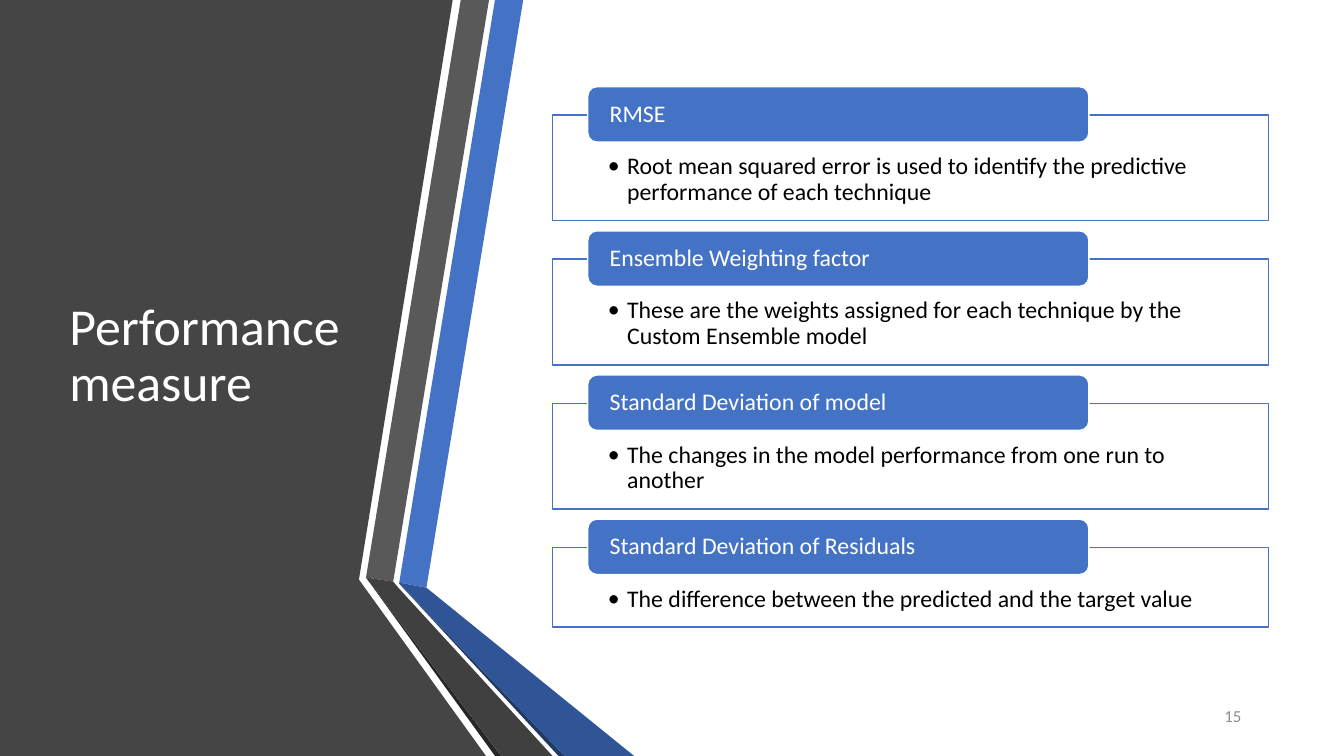
import pptx
import pptx.util
import pptx.dml.color
import pptx.enum.shapes
import pptx.enum.text
import pptx.oxml
import pptx.oxml.ns
from pptx.util import Inches

RGBColor = pptx.dml.color.RGBColor
Shapes = pptx.enum.shapes.MSO_SHAPE
Anchor = pptx.enum.text.MSO_ANCHOR
Align = pptx.enum.text.PP_ALIGN

WHITE = RGBColor(0xFF, 0xFF, 0xFF)
BLACK = RGBColor(0x00, 0x00, 0x00)
PANEL_GREY = RGBColor(0x45, 0x45, 0x45)
BAND_GREY = RGBColor(0x59, 0x59, 0x59)
FOLD_GREY = RGBColor(0x40, 0x40, 0x40)
EDGE_GREY = RGBColor(0x26, 0x26, 0x26)
NUMBER_GREY = RGBColor(0x8C, 0x8C, 0x8C)
BLUE = RGBColor(0x44, 0x72, 0xC4)
FOLD_BLUE = RGBColor(0x2F, 0x55, 0x97)
EDGE_BLUE = RGBColor(0x20, 0x38, 0x64)


def write(shape, text, size, color, anchor, insets, align=Align.LEFT):
    """Put one styled paragraph in the shape; insets are left, top, right, bottom."""
    frame = shape.text_frame
    frame.text = text
    frame.word_wrap = True
    frame.vertical_anchor = anchor
    (frame.margin_left, frame.margin_top,
     frame.margin_right, frame.margin_bottom) = [Inches(inset) for inset in insets]
    para = frame.paragraphs[0]
    para.alignment = align
    para.line_spacing = 0.9
    font = para.runs[0].font
    font.name = "Calibri"
    font.size = pptx.util.Pt(size)
    font.color.rgb = color
    return para


def add_box(kind, left, top, width, height, line_color):
    box = page.shapes.add_shape(kind, Inches(left), Inches(top), Inches(width), Inches(height))
    box.shadow.inherit = False
    box.fill.solid()
    box.line.color.rgb = line_color
    box.line.width = pptx.util.Pt(1)
    return box


deck = pptx.Presentation()
deck.slide_width = Inches(13.33)
deck.slide_height = Inches(7.5)
page = deck.slides.add_slide(deck.slide_layouts[6])

# Dark panel and the folded bands beside it, from back to front
bands = [
    (PANEL_GREY, [(0, 0), (4.49, 0), (3.56, 5.75), (4.82, 7.5), (0, 7.5)]),
    (BLUE, [(3.96, 5.78), (4.23, 5.83), (5.19, 0), (4.91, 0)]),
    (BAND_GREY, [(4.85, 0), (4.57, 0), (3.63, 5.73), (3.9, 5.77)]),
    (EDGE_GREY, [(3.63, 5.73), (4.91, 7.5), (4.97, 7.5)]),
    (EDGE_BLUE, [(3.96, 5.79), (5.54, 7.5), (5.6, 7.5)]),
    (FOLD_BLUE, [(3.96, 5.79), (5.6, 7.5), (6.29, 7.5), (4.23, 5.83), (3.96, 5.78)]),
    (FOLD_GREY, [(5.48, 7.5), (3.95, 5.83), (3.9, 5.77), (3.63, 5.73), (4.97, 7.5)]),
]
for color, corners in bands:
    points = [(Inches(x), Inches(y)) for x, y in corners]
    builder = page.shapes.build_freeform(*points[0])
    builder.add_line_segments(points[1:], close=True)
    band = builder.convert_to_shape()
    band.shadow.inherit = False
    band.fill.solid()
    band.fill.fore_color.rgb = color
    band.line.fill.background()

title = page.shapes.add_textbox(Inches(0.59), Inches(0.75), Inches(3.04), Inches(5.58))
write(title, "Performance measure", 37, WHITE, Anchor.MIDDLE, (0.1, 0.05, 0.1, 0.05))

number = page.shapes.add_textbox(Inches(11.22), Inches(6.9), Inches(1.19), Inches(0.4))
number_para = write(number, "15", 12, NUMBER_GREY, Anchor.MIDDLE,
                    (0.1, 0.05, 0.1, 0.05), Align.RIGHT)
number_para.line_spacing = 1.0

# Measures: a framed description with a heading tab over its top edge
measures = [
    ("RMSE", 1.05,
     "Root mean squared error is used to identify the predictive performance of each technique"),
    ("Ensemble Weighting factor", 1.05,
     "These are the weights assigned for each technique by the Custom Ensemble model"),
    ("Standard Deviation of model", 1.05,
     "The changes in the model performance from one run to another"),
    ("Standard Deviation of Residuals", 0.79,
     "The difference between the predicted and the target value"),
]
for index, (heading, height, description) in enumerate(measures):
    top = 1.14 + index * 1.43

    frame_box = add_box(Shapes.RECTANGLE, 5.48, top, 7.1, height, BLUE)
    frame_box.fill.fore_color.rgb = WHITE
    fill_color = frame_box.fill._xPr.find(".//" + pptx.oxml.ns.qn("a:srgbClr"))
    fill_color.append(pptx.oxml.parse_xml(
        '<a:alpha %s val="90000"/>' % pptx.oxml.ns.nsdecls("a")))
    para = write(frame_box, description, 17, BLACK, Anchor.TOP, (0.55, 0.39, 0.55, 0.05))
    properties = para._p.get_or_add_pPr()
    properties.set("marL", str(Inches(0.19)))
    properties.set("indent", str(-Inches(0.19)))
    for bullet in ('<a:buFont %s typeface="Calibri"/>', '<a:buChar %s char="•"/>'):
        properties.append(pptx.oxml.parse_xml(bullet % pptx.oxml.ns.nsdecls("a")))

    tab = add_box(Shapes.ROUNDED_RECTANGLE, 5.83, top - 0.28, 4.97, 0.55, WHITE)
    tab.fill.fore_color.rgb = BLUE
    write(tab, heading, 17, WHITE, Anchor.MIDDLE, (0.19, 0, 0.19, 0))

deck.save("out.pptx")
